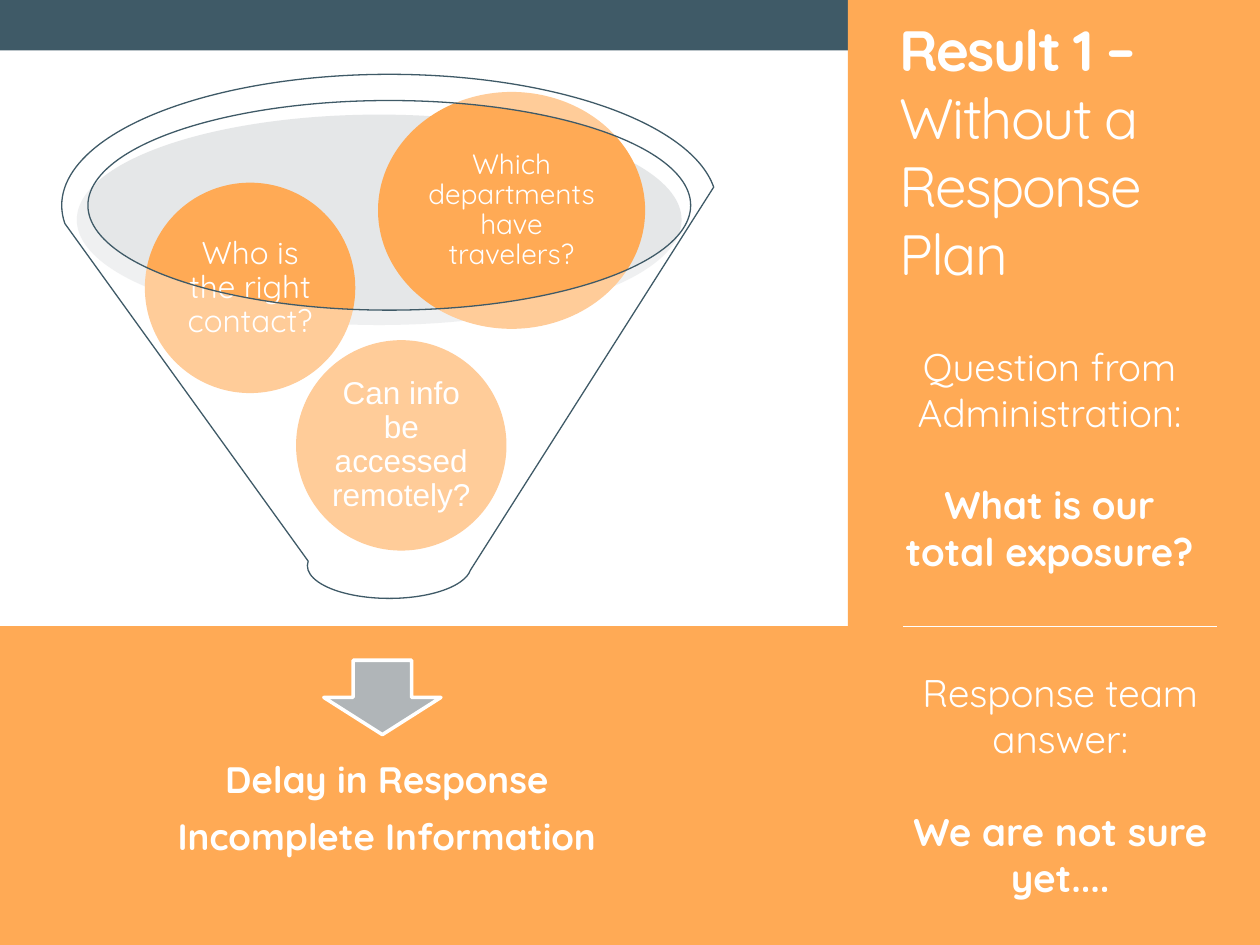
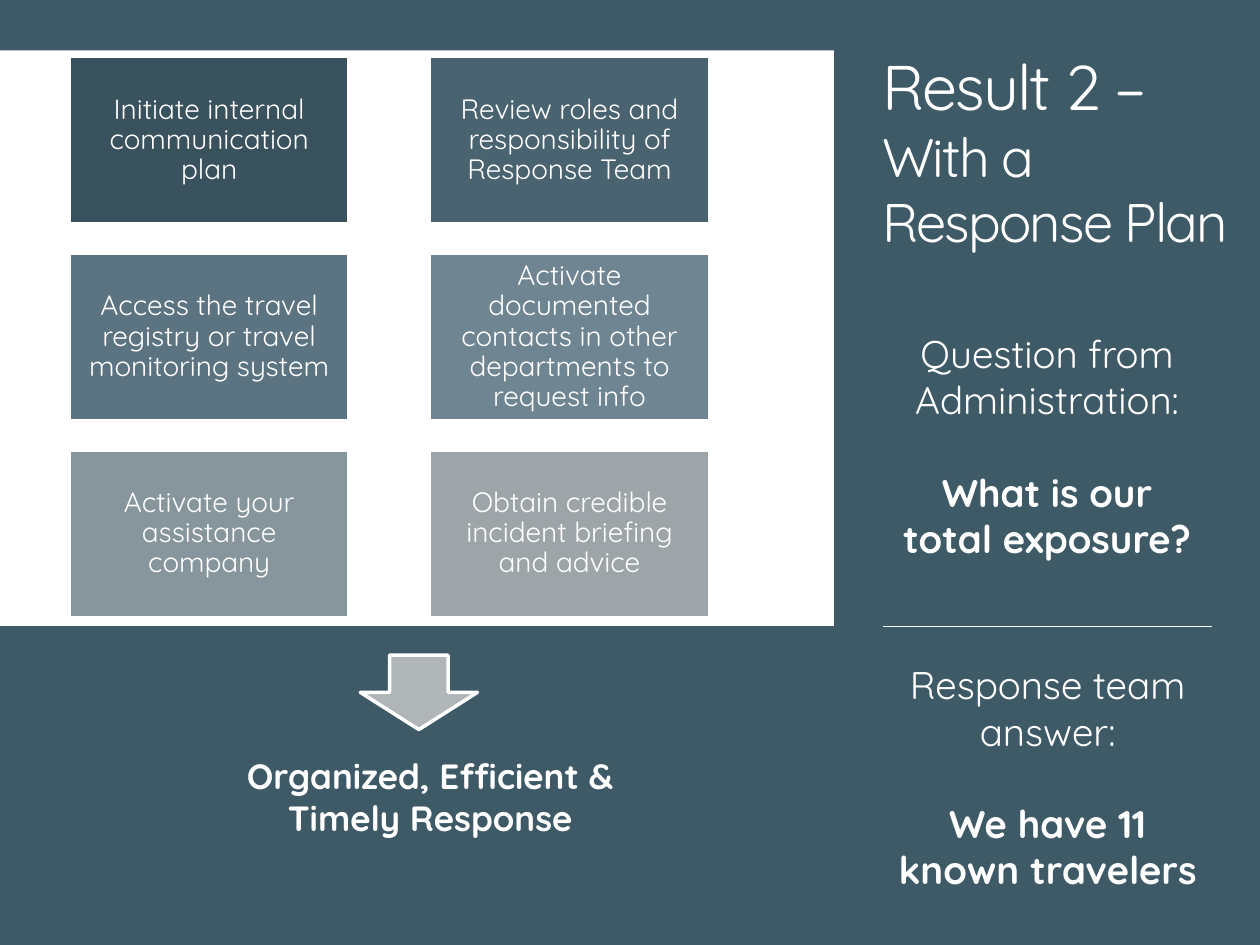
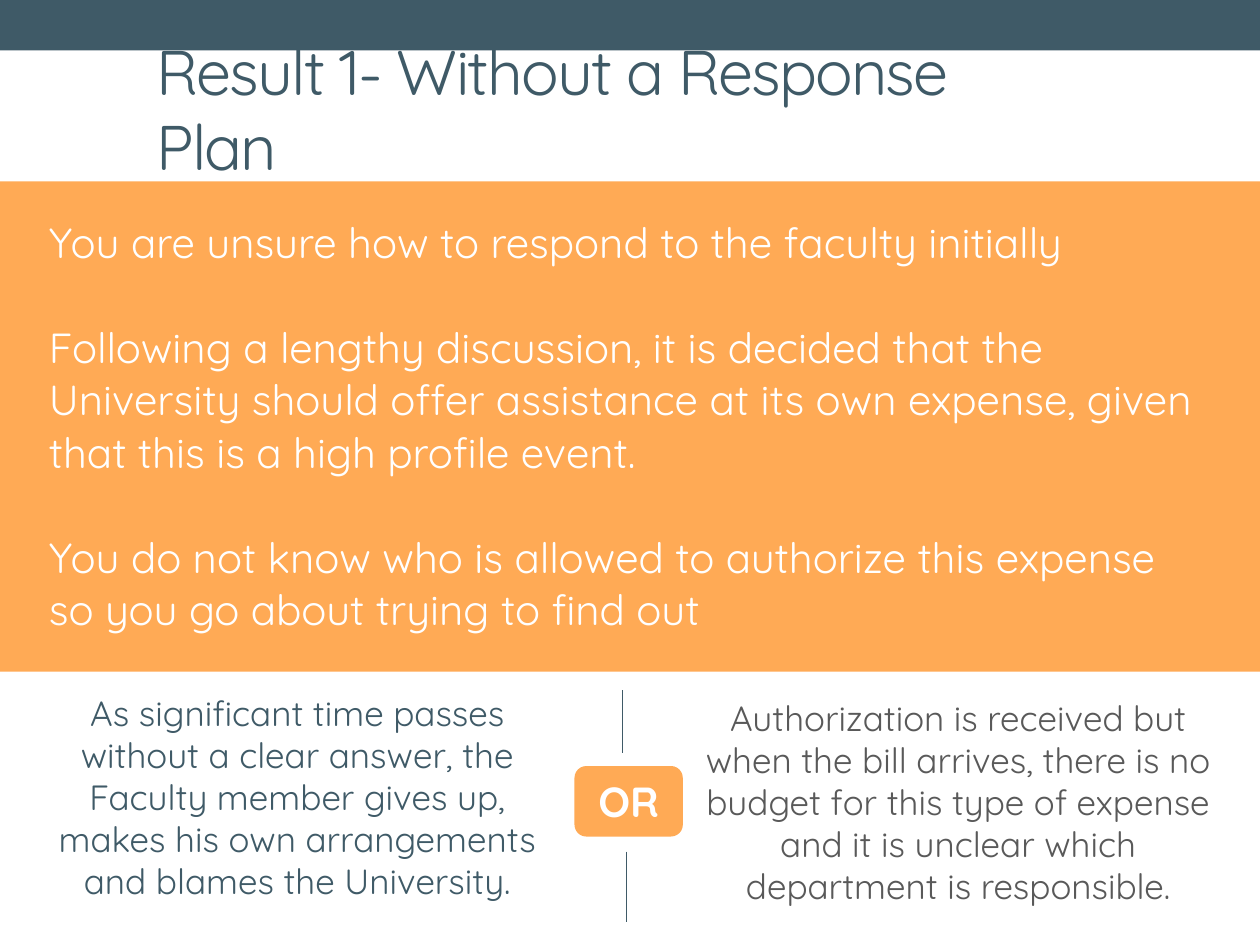
from pptx import Presentation
from pptx.dml.color import RGBColor
from pptx.enum.shapes import MSO_CONNECTOR, MSO_SHAPE
from pptx.enum.text import MSO_ANCHOR, MSO_AUTO_SIZE, PP_ALIGN
from pptx.oxml.ns import qn
from pptx.oxml.xmlchemy import OxmlElement
from pptx.util import Emu, Pt

# Shared look; one inch is 100 px
PX = 9144
WIDTH, HEIGHT = 1000, 750
FONT = "Quicksand"
SLATE, ORANGE, WHITE, GREY = "3F5A67", "FFAA55", "FFFFFF", "595959"
ARROW_GREY, POOL_GREY = "B0B5B8", "C0C4C7"
LOWER_TOP = 497
QUESTION_MARGINS = (10, 5, 10, 10)

STEPS = [
    ("Initiate internal communication plan", "39525D"),
    ("Review roles and responsibility of Response Team", "4A6370"),
    ("Access the travel registry or travel monitoring system", "5C7481"),
    ("Activate documented contacts in other departments to request info", "6F8591"),
    ("Activate your assistance company", "87959D"),
    ("Obtain credible incident briefing and advice", "9EA5A9"),
]


def px(*lengths):
    return [Emu(length * PX) for length in lengths]


def color(hex_string):
    return RGBColor.from_string(hex_string)


# Text
def add_span(para, text, size, ink=WHITE, bold=False, font=FONT, tracking=None):
    span = para.add_run()
    span.text = text
    span.font.name = font
    span.font.size = Pt(size)
    span.font.bold = bold
    span.font.color.rgb = color(ink)
    if tracking is not None:
        span.font._element.set("spc", str(tracking))


def prepare_frame(frame, margins=(10, 5, 10, 5), anchor=MSO_ANCHOR.TOP):
    frame.word_wrap = True
    frame.auto_size = MSO_AUTO_SIZE.NONE
    frame.vertical_anchor = anchor
    (frame.margin_left, frame.margin_top,
     frame.margin_right, frame.margin_bottom) = px(*margins)


def write_paragraphs(frame, texts, size, ink=WHITE, bold_from=None, font=FONT,
                     align=PP_ALIGN.CENTER, gap=0, after=None, spacing=None):
    """Write one paragraph per text; those from index bold_from on are bold."""
    for index, text in enumerate(texts):
        para = frame.paragraphs[0] if index == 0 else frame.add_paragraph()
        para.alignment = align
        para.space_before = Pt(gap if index else 0)
        if after is not None:
            para.space_after = Pt(after)
        if spacing is not None:
            para.line_spacing = spacing
        bold = bold_from is not None and index >= bold_from
        add_span(para, text, size, ink, bold, font)


def add_text(page, place, texts, size, margins=(10, 5, 10, 5),
             anchor=MSO_ANCHOR.TOP, **style):
    box = page.shapes.add_textbox(*px(*place))
    prepare_frame(box.text_frame, margins, anchor)
    write_paragraphs(box.text_frame, texts, size, **style)


def set_title(page, place, lines):
    """Fill the title; lines holds lists of (text, size, ink, bold)."""
    title = page.shapes.title
    title.left, title.top, title.width, title.height = px(*place)
    title.element.getparent().append(title.element)  # bring to the front
    prepare_frame(title.text_frame, anchor=MSO_ANCHOR.MIDDLE)
    para = title.text_frame.paragraphs[0]
    para.alignment = PP_ALIGN.LEFT
    for index, spans in enumerate(lines):
        if index:
            para.add_line_break()
        for text, size, ink, bold in spans:
            add_span(para, text, size, ink, bold, tracking=-100)


# Shapes and lines
def add_block(page, kind, place, fill, line=None, line_width=2, opacity=None):
    shape = page.shapes.add_shape(kind, *px(*place))
    shape.shadow.inherit = False
    shape.fill.solid()
    shape.fill.fore_color.rgb = color(fill)
    if opacity is not None:
        alpha = OxmlElement("a:alpha")
        alpha.set("val", str(opacity * 1000))
        shape.element.find(".//" + qn("a:srgbClr")).append(alpha)
    if line:
        shape.line.color.rgb = color(line)
        shape.line.width = Pt(line_width)
    else:
        shape.line.fill.background()
    return shape


def add_labelled(page, kind, place, fill, text, size, margin, line=None, font=FONT):
    shape = add_block(page, kind, place, fill, line)
    prepare_frame(shape.text_frame, (margin,) * 4, MSO_ANCHOR.MIDDLE)
    write_paragraphs(shape.text_frame, [text], size, font=font,
                     after=round(size * 0.35, 1), spacing=0.9)


def add_line(page, start, end, ink):
    line = page.shapes.add_connector(MSO_CONNECTOR.STRAIGHT, *px(*start, *end))
    line.line.color.rgb = color(ink)
    line.line.width = Pt(0.75)
    line.element.spPr.append(OxmlElement("a:effectLst"))


def add_down_arrow(page, left, top):
    add_block(page, MSO_SHAPE.DOWN_ARROW, (left, top, 93, 59), ARROW_GREY, WHITE)


# Parts that pages share
def add_page(deck):
    return deck.slides.add_slide(deck.slide_layouts.get_by_name("Title Only"))


def move_band_to_master(deck, page):
    band = add_block(page, MSO_SHAPE.RECTANGLE, (0, 0, WIDTH, 40), SLATE).element
    band.nvSpPr.cNvPr.set("id", "99")
    deck.slide_master.shapes.element.insert(2, band)


def add_result_panels(page, fill, left, question_place, answer_place, answer, rule):
    """Right and lower panels with the question, the answer and a rule between."""
    add_block(page, MSO_SHAPE.RECTANGLE, (left, 0, WIDTH - left, LOWER_TOP), fill)
    add_block(page, MSO_SHAPE.RECTANGLE,
              (0, LOWER_TOP, WIDTH, HEIGHT - LOWER_TOP), fill)
    add_text(page, question_place,
             ["Question from Administration:", "What is our total exposure?"],
             22, QUESTION_MARGINS, bold_from=1, gap=26.5)
    add_text(page, answer_place, ["Response team answer:", answer],
             22, bold_from=1, gap=26.5)
    add_line(page, (rule[0], LOWER_TOP), (rule[1], LOWER_TOP), WHITE)


# Pages
def build_without_plan(page):
    add_result_panels(page, ORANGE, 673, (701, 267, 264, 200), (695, 526, 293, 195),
                      "We are not sure yet....", (717, 966))
    # Funnel with the open questions in it
    add_block(page, MSO_SHAPE.OVAL, (61, 91, 480, 167), POOL_GREY, opacity=40)
    add_down_arrow(page, 257, 524)
    add_text(page, (84, 585, 446, 112), ["Delay in Response", "Incomplete Information"],
             21, (16,) * 4, MSO_ANCHOR.MIDDLE, bold_from=0, after=7.4)
    for place, text, size, margin, font in [
        ((235, 270, 167, 167), "Can info be accessed remotely?", 18, 3, "Arial"),
        ((115, 145, 167, 167), "Who is the right contact?", 18, 3, FONT),
        ((300, 73, 212, 188), "Which departments have travelers?", 16, 2, FONT),
    ]:
        add_labelled(page, MSO_SHAPE.OVAL, place, ORANGE, text, size, margin, font=font)
    add_block(page, MSO_SHAPE.FUNNEL, (49, 59, 520, 416), WHITE, SLATE, 0.75, 40)
    set_title(page, (704, 22, 245, 196),
              [[("Result 1 –", 32.4, WHITE, True)],
               [("Without a Response Plan", 32.4, WHITE, False)]])


def build_with_plan(page):
    add_result_panels(page, SLATE, 662, (699, 257, 264, 200), (701, 520, 261, 195),
                      "We have 11 known travelers", (701, 962))
    set_title(page, (690, 22, 295, 195),
              [[("Result 2 – ", 36, WHITE, False),
                ("With a Response Plan", 31, WHITE, False)]])
    add_text(page, (166, 594, 351, 77), ["Organized, Efficient & Timely Response"],
             20, bold_from=0)
    add_down_arrow(page, 286, 520)
    # Steps in two columns
    for index, (text, fill) in enumerate(STEPS):
        row, column = divmod(index, 2)
        place = (55 + column * 286, 45 + row * 156, 222, 133)
        add_labelled(page, MSO_SHAPE.RECTANGLE, place, fill, text, 16, 7, WHITE)


def build_consequences(page):
    add_block(page, MSO_SHAPE.RECTANGLE, (0, 144, WIDTH, 389), ORANGE)
    set_title(page, (114, 41, 753, 89),
              [[("Result 1- Without a Response Plan", 36, SLATE, False)]])
    add_text(page, (29, 165, 940, 347), [
        "You are unsure how to respond to the faculty initially",
        "Following a lengthy discussion, it is decided that the University should "
        "offer assistance at its own expense, given that this is a high profile event.",
        "You do not know who is allowed to authorize this expense so you go about "
        "trying to find out",
    ], 24, align=PP_ALIGN.LEFT, gap=30, spacing=Pt(30))
    # Two outcomes, split by OR
    add_text(page, (17, 544, 438, 183), [
        "As significant time passes without a clear answer, the Faculty member gives "
        "up, makes his own arrangements and blames the University."],
        20, QUESTION_MARGINS, ink=SLATE)
    add_text(page, (538, 548, 445, 183), [
        "Authorization is received but when the bill arrives, there is no budget for "
        "this type of expense and it is unclear which department is responsible."],
        20, QUESTION_MARGINS, ink=GREY)
    badge = add_block(page, MSO_SHAPE.ROUNDED_RECTANGLE, (456, 608, 86, 56), ORANGE)
    prepare_frame(badge.text_frame)
    write_paragraphs(badge.text_frame, ["OR"], 24, bold_from=0)
    add_line(page, (494, 548), (494, 598), SLATE)
    add_line(page, (497, 676), (497, 732), SLATE)


def main():
    deck = Presentation()
    deck.slide_width, deck.slide_height = px(WIDTH, HEIGHT)
    pages = [add_page(deck) for _ in range(3)]
    move_band_to_master(deck, pages[0])
    build_without_plan(pages[0])
    build_with_plan(pages[1])
    build_consequences(pages[2])
    deck.save("out.pptx")


if __name__ == "__main__":
    main()
